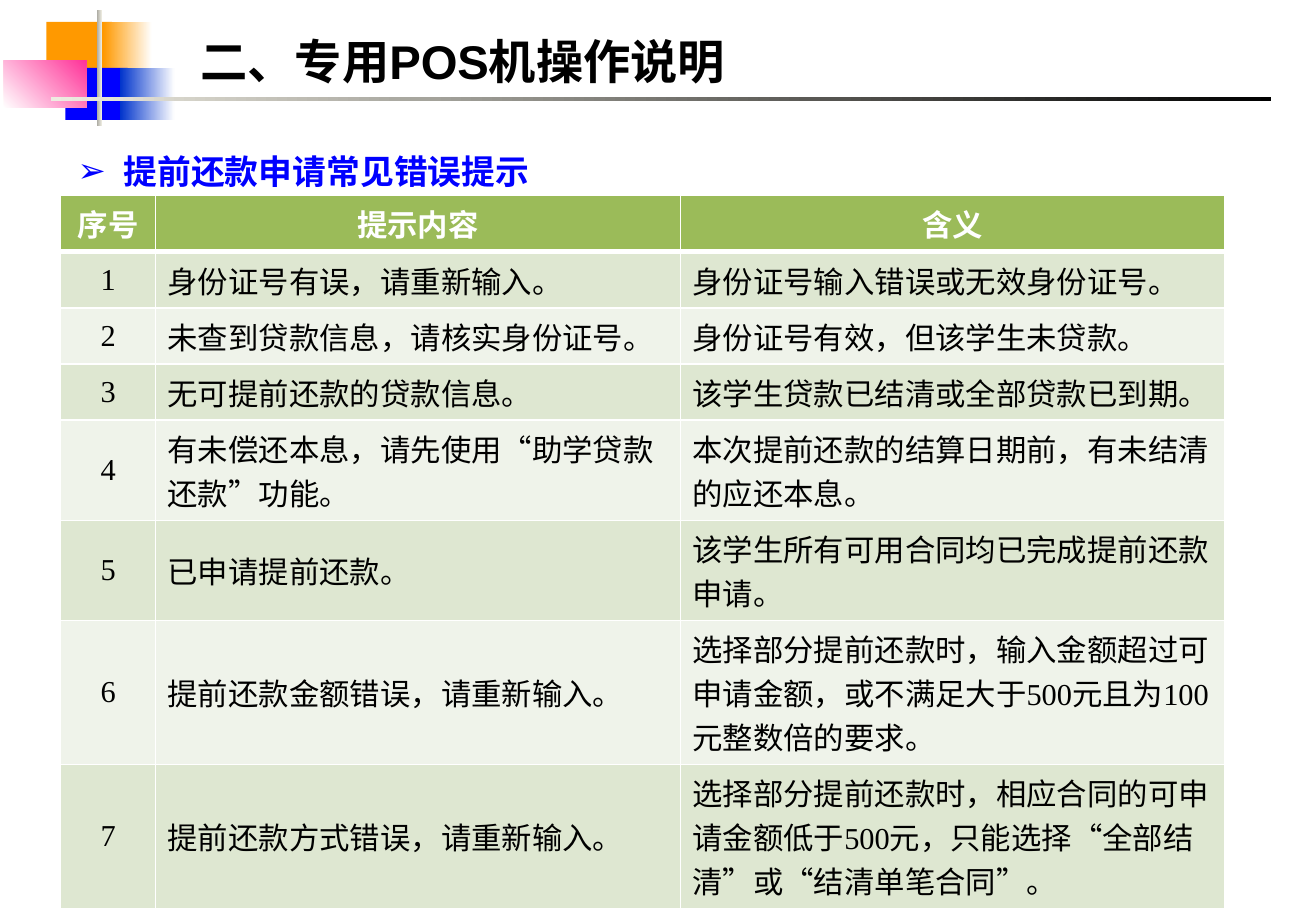
import lxml.etree
import pptx
import pptx.dml.color
import pptx.enum.shapes
import pptx.enum.text
import pptx.oxml.ns
import pptx.util

Cm = pptx.util.Cm
Pt = pptx.util.Pt
ALIGN = pptx.enum.text.PP_ALIGN
ANCHOR = pptx.enum.text.MSO_ANCHOR

# left, top, width, height in cm; first colour, last colour, angle
ORNAMENTS = [
    (0.97, 0.46, 1.37, 1.09, "FF9900", None, 0),
    (2.16, 0.46, 1.02, 1.09, "FF9900", "FFFFFF", 0),
    (1.37, 1.42, 1.3, 1.09, "0000FF", None, 0),
    (2.51, 1.42, 1.14, 1.09, "0033CC", "FFFFFF", 0),
    (0.08, 1.27, 1.73, 0.99, "FFFFFF", "FF3399", 45),
    (2.03, 0.2, 0.1, 2.44, "AAA9A1", "EEECE1", 0),
    (1.07, 2.03, 25.5, 0.08, "EEECE1", "000000", 0),
]
HEADINGS = ("序号", "提示内容", "含义")
MESSAGES = [
    ("身份证号有误，请重新输入。", "身份证号输入错误或无效身份证号。"),
    ("未查到贷款信息，请核实身份证号。", "身份证号有效，但该学生未贷款。"),
    ("无可提前还款的贷款信息。", "该学生贷款已结清或全部贷款已到期。"),
    ("有未偿还本息，请先使用“助学贷款还款”功能。",
     "本次提前还款的结算日期前，有未结清的应还本息。"),
    ("已申请提前还款。", "该学生所有可用合同均已完成提前还款申请。"),
    ("提前还款金额错误，请重新输入。",
     "选择部分提前还款时，输入金额超过可申请金额，或不满足大于500元且为100元整数倍的要求。"),
    ("提前还款方式错误，请重新输入。",
     "选择部分提前还款时，相应合同的可申请金额低于500元，只能选择“全部结清”或“结清单笔合同”。"),
]
COLUMN_WIDTHS = (1.98, 10.97, 11.38)
ROW_HEIGHTS = (1.04, 1.04, 1.04, 1.04, 1.78, 1.78, 2.54, 2.54)


def colour(code):
    return pptx.dml.color.RGBColor.from_string(code)


def add_element(parent, tag, **attributes):
    return lxml.etree.SubElement(parent, pptx.oxml.ns.qn(tag), attributes)


def style_font(para, name, size, code, bold):
    para.font.name = name
    para.font.size = Pt(size)
    para.font.color.rgb = colour(code)
    para.font.bold = bold


def place(box, left, top, width, height):
    box.left, box.top, box.width, box.height = map(Cm, (left, top, width, height))


def add_ornament(page, left, top, width, height, first, last, angle):
    """Add a borderless rectangle, graded when a last colour is given."""
    box = page.shapes.add_shape(pptx.enum.shapes.MSO_SHAPE.RECTANGLE,
                                Cm(left), Cm(top), Cm(width), Cm(height))
    box.shadow.inherit = False
    box.line.fill.background()
    if last is None:
        box.fill.solid()
        box.fill.fore_color.rgb = colour(first)
        return
    box.fill.gradient()
    box.fill.gradient_angle = angle
    for stop, code, position in zip(box.fill.gradient_stops, (first, last), (0, 1)):
        stop.color.rgb = colour(code)
        stop.position = position


def fill_title(page):
    title = page.shapes.title
    place(title, 3.94, 0.48, 22.22, 1.57)
    frame = title.text_frame
    frame.text = "二、专用POS机操作说明"
    frame.auto_size = pptx.enum.text.MSO_AUTO_SIZE.NONE
    frame.vertical_anchor = ANCHOR.MIDDLE
    frame.paragraphs[0].alignment = ALIGN.LEFT
    style_font(frame.paragraphs[0], "Arial", 28, "000000", True)


def fill_body(page):
    body = page.placeholders[1]
    place(body, 1.37, 3.02, 24.77, 14)
    frame = body.text_frame
    frame.text = "提前还款申请常见错误提示"
    frame.auto_size = pptx.enum.text.MSO_AUTO_SIZE.NONE
    para = frame.paragraphs[0]
    para.space_before = Pt(0)
    properties = para._p.get_or_add_pPr()
    properties.set("marL", str(Cm(0.96)))
    properties.set("indent", str(-Cm(0.96)))
    add_element(properties, "a:buFont", typeface="Arial")
    add_element(properties, "a:buChar", char="➢")
    style_font(para, "Times New Roman", 20, "0000FF", True)


def add_borders(cell, top, bottom):
    properties = cell._tc.get_or_add_tcPr()
    for side, width in (("L", 1), ("R", 1), ("T", top), ("B", bottom)):
        line = add_element(properties, "a:ln" + side, w=str(Pt(width)))
        add_element(add_element(line, "a:solidFill"), "a:srgbClr", val="FFFFFF")


def fill_cell(cell, text, row, column):
    heading = row == 0
    add_borders(cell, 3 if row == 1 else 1, 3 if heading else 1)
    cell.fill.solid()
    band = "DEE7D1" if row % 2 else "EFF3EA"
    cell.fill.fore_color.rgb = colour("9BBB59" if heading else band)
    cell.vertical_anchor = ANCHOR.MIDDLE
    cell.text = text
    para = cell.text_frame.paragraphs[0]
    para.alignment = ALIGN.CENTER if heading or column == 0 else ALIGN.LEFT
    style_font(para, "Times New Roman", 18, "FFFFFF" if heading else "000000", heading)


def add_message_table(page):
    rows = [HEADINGS] + [(str(number), *message)
                         for number, message in enumerate(MESSAGES, 1)]
    table = page.shapes.add_table(len(rows), len(HEADINGS), Cm(1.27), Cm(4.09),
                                  Cm(sum(COLUMN_WIDTHS)), Cm(sum(ROW_HEIGHTS))).table
    for column, width in zip(table.columns, COLUMN_WIDTHS):
        column.width = Cm(width)
    for row, height in zip(table.rows, ROW_HEIGHTS):
        row.height = Cm(height)
    for row, texts in enumerate(rows):
        for column, text in enumerate(texts):
            fill_cell(table.cell(row, column), text, row, column)


def main():
    deck = pptx.Presentation()
    deck.slide_width = Cm(27.51)
    deck.slide_height = Cm(19.05)
    page = deck.slides.add_slide(deck.slide_layouts[1])
    for ornament in ORNAMENTS:
        add_ornament(page, *ornament)
    fill_title(page)
    fill_body(page)
    add_message_table(page)
    deck.save("out.pptx")


if __name__ == "__main__":
    main()
